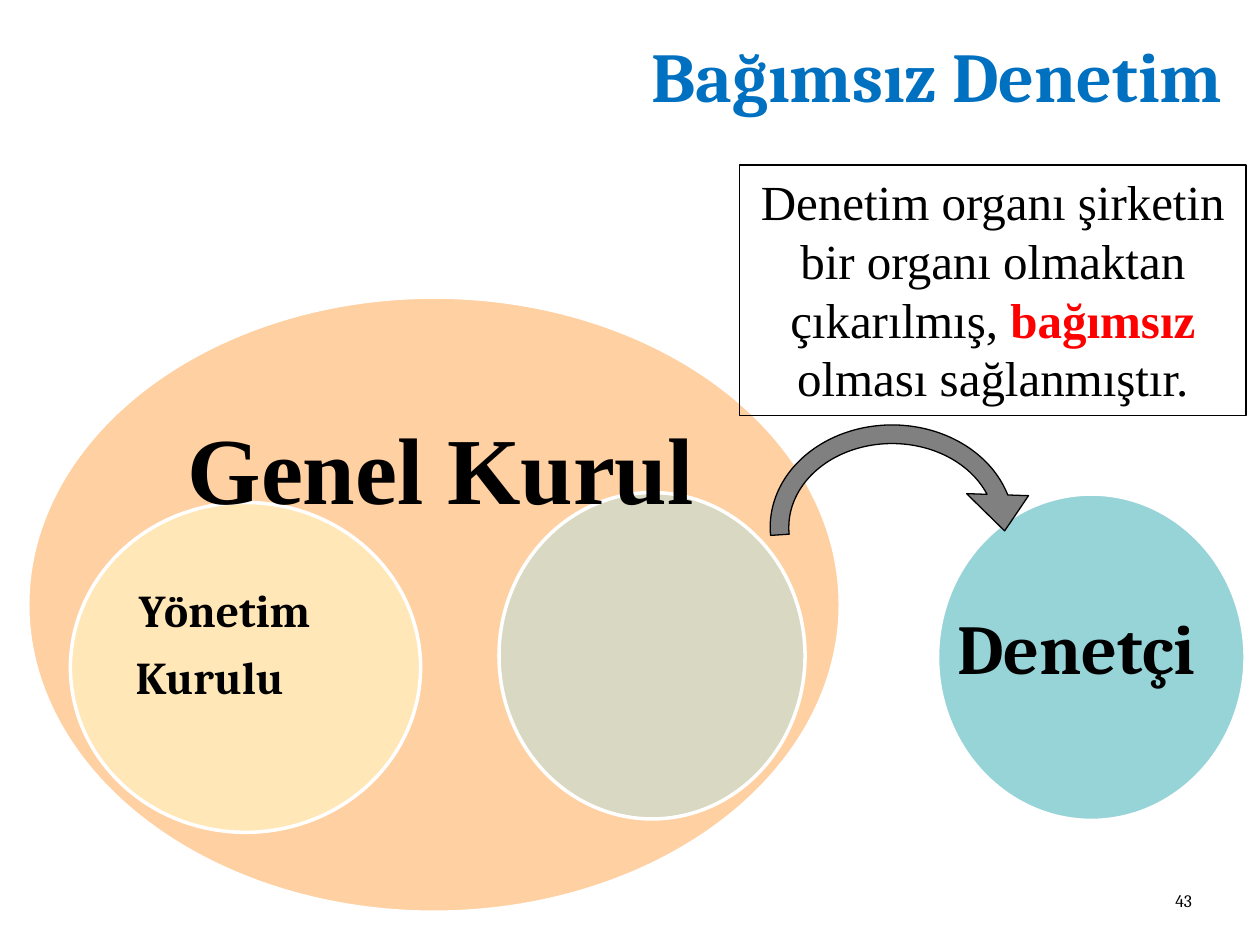
from dataclasses import dataclass

from lxml.etree import SubElement
from pptx import Presentation
from pptx.dml.color import RGBColor
from pptx.enum.shapes import MSO_SHAPE
from pptx.enum.text import MSO_ANCHOR, MSO_AUTO_SIZE, PP_ALIGN
from pptx.oxml.ns import qn
from pptx.util import Cm, Pt


@dataclass(frozen=True)
class Theme:
    heading_font: str = "Cambria"
    body_font: str = "Times New Roman"
    title: str = "0070C0"
    text: str = "000000"
    accent: str = "FF0000"
    outline: str = "FFFFFF"
    assembly: str = "FFA347"
    board: str = "FFFFCC"
    vacated: str = "B5E0E3"
    auditor: str = "97D4D8"
    arrow: str = "808080"
    title_size: int = 40
    assembly_size: int = 54
    note_size: int = 28
    board_size: int = 26
    number_size: int = 10


THEME = Theme()


def lengths(box):
    return [Cm(value) for value in box]


def format_run(run, size, font=THEME.heading_font, color=THEME.text, bold=True):
    run.font.name = font
    run.font.size = Pt(size)
    run.font.bold = bold
    run.font.color.rgb = RGBColor.from_string(color)


def add_filled_shape(shapes, kind, box, fill, line, width, opacity=100):
    """Add a preset shape; a fill of None leaves it hollow."""
    shape = shapes.add_shape(kind, *lengths(box))
    shape.shadow.inherit = False
    if fill is None:
        shape.fill.background()
    else:
        shape.fill.solid()
        shape.fill.fore_color.rgb = RGBColor.from_string(fill)
        if opacity < 100:
            color = shape.fill._xPr.find(qn("a:solidFill"))[0]
            SubElement(color, qn("a:alpha"), val=str(opacity * 1000))
    shape.line.color.rgb = RGBColor.from_string(line)
    shape.line.width = Pt(width)
    return shape


def add_circle(shapes, box, fill, opacity=100):
    return add_filled_shape(shapes, MSO_SHAPE.OVAL, box, fill, THEME.outline, 2, opacity)


def add_label(shapes, box, text, size, align, anchor=MSO_ANCHOR.TOP,
              inset=True, wrap=True, **run_style):
    text_frame = shapes.add_textbox(*lengths(box)).text_frame
    text_frame.word_wrap = wrap
    text_frame.vertical_anchor = anchor
    if not inset:
        text_frame.margin_left = text_frame.margin_right = 0
        text_frame.margin_top = text_frame.margin_bottom = 0
    text_frame.text = text
    for paragraph in text_frame.paragraphs:
        paragraph.alignment = align
        for run in paragraph.runs:
            format_run(run, size, **run_style)
    return text_frame


def add_company(slide):
    """Group the general assembly with the board and the vacated organ."""
    shapes = slide.shapes.add_group_shape().shapes
    add_circle(shapes, (0.56, 5.99, 16.38, 12.4), THEME.assembly, 50)
    add_circle(shapes, (10.06, 9.93, 6.17, 6.58), THEME.vacated, 50)
    add_circle(shapes, (1.42, 10.13, 7.06, 6.65), THEME.board, 50)
    text_frame = add_label(shapes, (2.11, 11.84, 4.24, 2.36), "Yönetim\nKurulu",
                           THEME.board_size, PP_ALIGN.CENTER, MSO_ANCHOR.BOTTOM, inset=False)
    first, last = text_frame.paragraphs
    first.line_spacing = last.line_spacing = 0.9
    first.space_after = Pt(10)
    first._p.get_or_add_pPr().set("marL", str(Cm(0.6)))


def add_auditor(slide):
    shapes = slide.shapes.add_group_shape().shapes
    add_circle(shapes, (18.9, 9.96, 6.2, 6.58), THEME.auditor)
    text_frame = add_label(shapes, (19.3, 11.33, 5.99, 3.61), "Denetçi", THEME.title_size,
                           PP_ALIGN.LEFT, MSO_ANCHOR.MIDDLE, inset=False)
    text_frame.paragraphs[0].line_spacing = 0.9


def add_curved_arrow(slide):
    arrow = add_filled_shape(slide.shapes, MSO_SHAPE.CIRCULAR_ARROW, (15.09, 8.13, 5.79, 5),
                             THEME.arrow, THEME.text, 0.75)
    for index, value in enumerate((0.075, 11.42, 205.7, 105.69, 0.125)):
        arrow.adjustments[index] = value


def add_note(slide):
    note = add_filled_shape(slide.shapes, MSO_SHAPE.RECTANGLE, (14.91, 3.33, 10.21, 5.05),
                            None, THEME.text, 0.75)
    text_frame = note.text_frame
    text_frame.word_wrap = True
    text_frame.auto_size = MSO_AUTO_SIZE.SHAPE_TO_FIT_TEXT
    text_frame.vertical_anchor = MSO_ANCHOR.TOP
    paragraph = text_frame.paragraphs[0]
    paragraph.alignment = PP_ALIGN.CENTER
    for text, color, bold in (
        ("Denetim organı şirketin bir organı olmaktan çıkarılmış, ", THEME.text, False),
        ("bağımsız", THEME.accent, True),
        (" olması sağlanmıştır.", THEME.text, False),
    ):
        run = paragraph.add_run()
        run.text = text
        format_run(run, THEME.note_size, THEME.body_font, color, bold)


def main():
    presentation = Presentation()
    presentation.slide_width, presentation.slide_height = Cm(25.4), Cm(19.05)
    slide = presentation.slides.add_slide(presentation.slide_layouts[6])
    add_label(slide.shapes, (2.69, 0.53, 22.2, 1.96), "Bağımsız Denetim",
              THEME.title_size, PP_ALIGN.RIGHT, color=THEME.title)
    add_company(slide)
    add_auditor(slide)
    add_curved_arrow(slide)
    add_note(slide)
    add_label(slide.shapes, (3.48, 8.15, 10.82, 2.57), "Genel Kurul", THEME.assembly_size,
              PP_ALIGN.CENTER, wrap=False, font=THEME.body_font)
    add_label(slide.shapes, (19, 17.53, 5.28, 0.97), "43", THEME.number_size,
              PP_ALIGN.RIGHT, MSO_ANCHOR.BOTTOM, bold=False)
    presentation.save("out.pptx")


if __name__ == "__main__":
    main()
